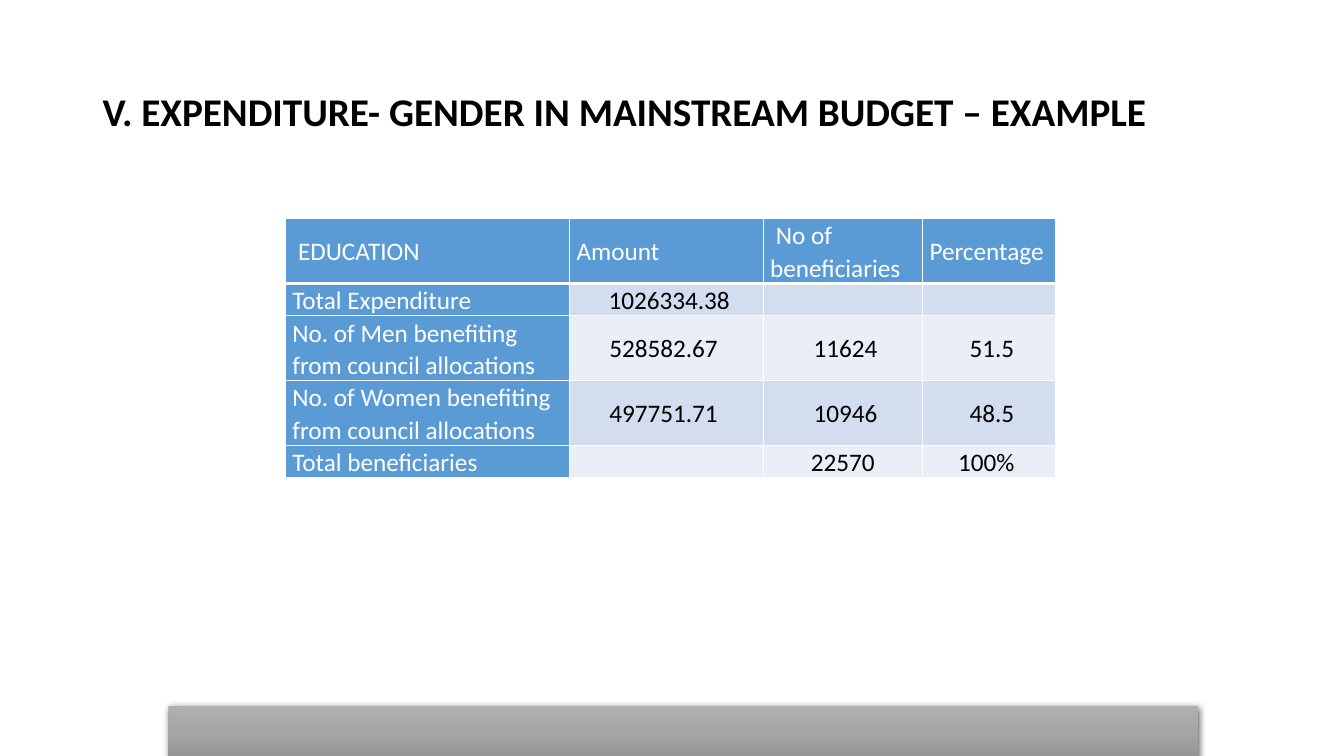
from copy import deepcopy

from pptx import Presentation
from pptx.dml.color import RGBColor
from pptx.enum.shapes import MSO_SHAPE
from pptx.enum.text import MSO_ANCHOR, PP_ALIGN
from pptx.oxml import parse_xml
from pptx.oxml.ns import nsdecls, qn
from pptx.util import Inches, Pt

TITLE = "V. EXPENDITURE- GENDER IN MAINSTREAM BUDGET – EXAMPLE"
# Some cells carry a no-break space that pads their text.
EDUCATION_ROWS = [
    (" EDUCATION", "Amount", " No of beneficiaries", "Percentage"),
    ("Total Expenditure", " 1026334.38", "", ""),
    ("No. of Men benefiting from council allocations", "528582.67 ", " 11624", " 51.5"),
    ("No. of Women benefiting from council allocations", "497751.71 ", " 10946", " 48.5"),
    ("Total beneficiaries", "", "22570", "100% "),
]
COLUMN_WIDTHS = (2.82, 1.92, 1.58, 1.32)
LINES_PER_ROW = (2, 1, 2, 2, 1)
LINE_HEIGHT = 0.32

FONT = "Calibri"
BLACK = RGBColor(0x00, 0x00, 0x00)
WHITE = RGBColor(0xFF, 0xFF, 0xFF)
HEADING_BLUE = RGBColor(0x5B, 0x9B, 0xD5)
BANDS = (RGBColor(0xEA, 0xEF, 0xF7), RGBColor(0xD2, 0xDE, 0xEF))
FOOTER_STOPS = (
    (0, RGBColor(0xAF, 0xAF, 0xAF)),
    (0.5, RGBColor(0xA5, 0xA5, 0xA5)),
    (1, RGBColor(0x93, 0x93, 0x93)),
)


def set_font(paragraph, size, color, bold=False):
    font = paragraph.font
    font.name, font.size, font.bold = FONT, Pt(size), bold
    font.color.rgb = color


def add_title(slide):
    box = slide.shapes.add_textbox(Inches(0.92), Inches(0.4), Inches(11.5), Inches(1.45))
    frame = box.text_frame
    frame.word_wrap = True
    frame.vertical_anchor = MSO_ANCHOR.MIDDLE
    paragraph = frame.paragraphs[0]
    paragraph.text = TITLE
    paragraph.line_spacing = 0.9
    set_font(paragraph, 28, BLACK, bold=True)


def set_borders(cell, bottom_width):
    """Rule all four sides in white; the side lines come before the fill."""
    properties = cell._tc.get_or_add_tcPr()
    for index, side in enumerate("LRTB"):
        width = Pt(bottom_width if side == "B" else 1)
        properties.insert(index, parse_xml(
            f'<a:ln{side} {nsdecls("a")} w="{width}"><a:solidFill>'
            f'<a:srgbClr val="{WHITE}"/></a:solidFill></a:ln{side}>'))


def fill_cell(cell, text, row, column):
    is_heading = row == 0 or column == 0
    cell.fill.solid()
    cell.fill.fore_color.rgb = HEADING_BLUE if is_heading else BANDS[row % 2]
    set_borders(cell, bottom_width=3 if row == 0 else 1)
    cell.margin_left = cell.margin_right = Inches(0.07)
    cell.margin_top = cell.margin_bottom = 0
    cell.vertical_anchor = MSO_ANCHOR.MIDDLE
    paragraph = cell.text_frame.paragraphs[0]
    paragraph.text = text
    paragraph.alignment = PP_ALIGN.LEFT if is_heading else PP_ALIGN.CENTER
    paragraph.line_spacing = 1.07
    paragraph.space_after = Pt(8)
    set_font(paragraph, 18, WHITE if is_heading else BLACK)


def add_education_table(slide):
    table = slide.shapes.add_table(
        len(EDUCATION_ROWS), len(COLUMN_WIDTHS), Inches(2.83), Inches(2.17),
        Inches(sum(COLUMN_WIDTHS)), Inches(LINE_HEIGHT * sum(LINES_PER_ROW))).table
    table.first_row = table.horz_banding = False
    for column, width in zip(table.columns, COLUMN_WIDTHS):
        column.width = Inches(width)
    for row, lines in zip(table.rows, LINES_PER_ROW):
        row.height = Inches(LINE_HEIGHT * lines)
    for row, texts in enumerate(EDUCATION_ROWS):
        for column, text in enumerate(texts):
            fill_cell(table.cell(row, column), text, row, column)


def add_footer_bar(slide):
    bar = slide.shapes.add_shape(
        MSO_SHAPE.RECTANGLE, Inches(1.67), Inches(7), Inches(10.21), Inches(0.53))
    bar.line.fill.background()
    bar.fill.gradient()
    bar.fill.gradient_angle = 270
    properties = bar._element.spPr
    stop_list = properties.find(".//" + qn("a:gsLst"))
    stop_list.append(deepcopy(stop_list[0]))
    for stop, (position, color) in zip(bar.fill.gradient_stops, FOOTER_STOPS):
        stop.position = position
        stop.color.rgb = color
    bar.shadow.inherit = False
    properties.find(qn("a:effectLst")).append(parse_xml(
        f'<a:outerShdw {nsdecls("a")} blurRad="{Pt(4.5)}" dist="{Pt(1.5)}" dir="5400000" '
        f'algn="ctr" rotWithShape="0"><a:srgbClr val="{BLACK}"><a:alpha val="63000"/>'
        '</a:srgbClr></a:outerShdw>'))


def main():
    deck = Presentation()
    deck.slide_width, deck.slide_height = Inches(13.33), Inches(7.5)
    slide = deck.slides.add_slide(deck.slide_layouts[6])
    add_title(slide)
    add_education_table(slide)
    add_footer_bar(slide)
    deck.save("out.pptx")


if __name__ == "__main__":
    main()
